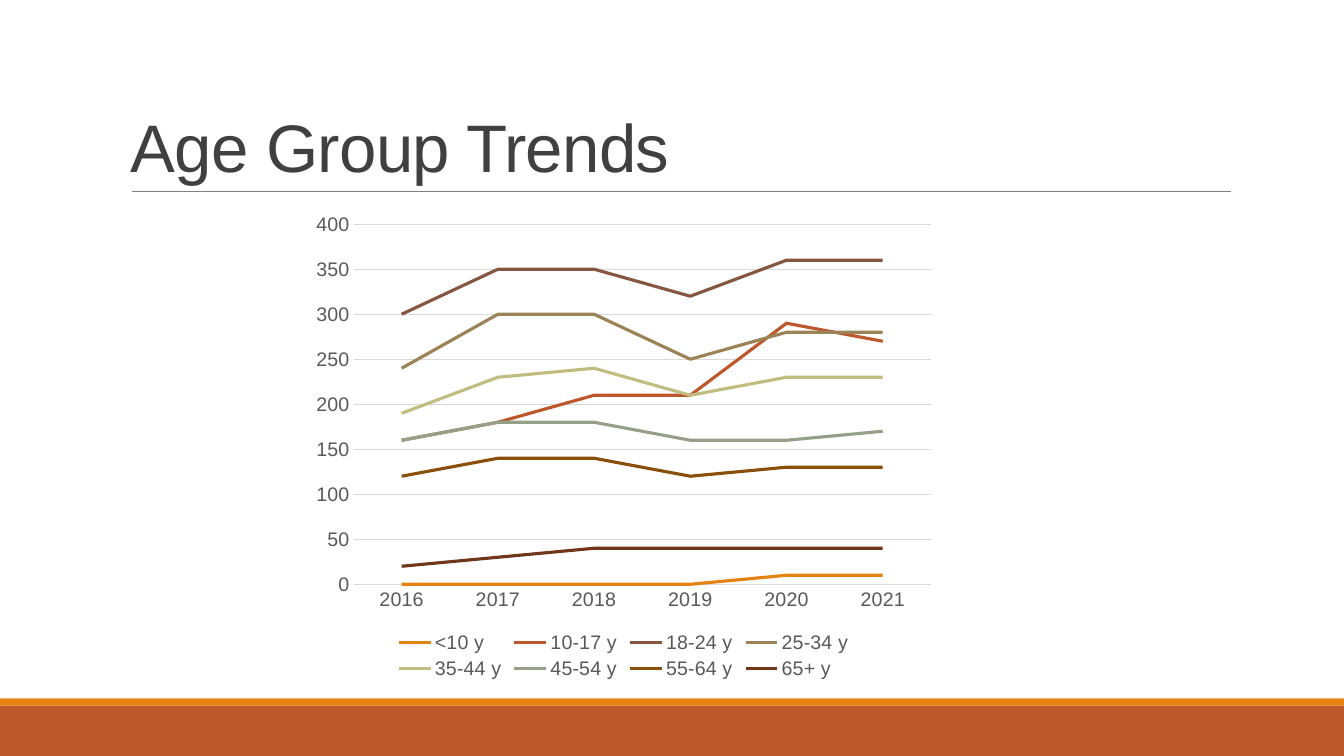
import dataclasses

import lxml.etree
import pptx
import pptx.chart.data
import pptx.dml.color
import pptx.enum.chart
import pptx.enum.shapes
import pptx.enum.text
import pptx.oxml.ns
import pptx.util
from pptx.util import Inches


@dataclasses.dataclass(frozen=True)
class Theme:
    """Colours, font and type sizes of the slide."""
    font: str = "Arial"
    title: str = "404040"
    label: str = "595959"
    grid: str = "D9D9D9"
    rule: str = "808080"
    band: str = "BD582C"
    stripe: str = "E48312"
    title_size: float = 48
    label_size: float = 14
    rule_width: float = 0.5
    grid_width: float = 0.75
    trend_width: float = 2.25


@dataclasses.dataclass(frozen=True)
class Box:
    """Place and size in inches."""
    left: float
    top: float
    width: float
    height: float

    def lengths(self) -> tuple:
        """Return the four measures as lengths."""
        return tuple(map(Inches, dataclasses.astuple(self)))


@dataclasses.dataclass(frozen=True)
class Band:
    """Coloured strip across the foot of the slide."""
    box: Box
    color: str


@dataclasses.dataclass(frozen=True)
class AgeGroup:
    """Yearly counts of one age group."""
    name: str
    color: str
    counts: tuple


THEME = Theme()
SLIDE_WIDTH, SLIDE_HEIGHT = 13.33, 7.5
YEARS = ("2016", "2017", "2018", "2019", "2020", "2021")
BANDS = (
    Band(Box(0, 7, SLIDE_WIDTH, 0.5), THEME.band),
    Band(Box(0, 6.93, SLIDE_WIDTH, 0.07), THEME.stripe),
)
AGE_GROUPS = (
    AgeGroup("<10 y", "E48312", (0, 0, 0, 0, 10, 10)),
    AgeGroup("10-17 y", "BD582C", (160, 180, 210, 210, 290, 270)),
    AgeGroup("18-24 y", "865640", (300, 350, 350, 320, 360, 360)),
    AgeGroup("25-34 y", "9B8357", (240, 300, 300, 250, 280, 280)),
    AgeGroup("35-44 y", "C2BC80", (190, 230, 240, 210, 230, 230)),
    AgeGroup("45-54 y", "94A088", (160, 180, 180, 160, 160, 170)),
    AgeGroup("55-64 y", "894F0B", (120, 140, 140, 120, 130, 130)),
    AgeGroup("65+ y", "71351A", (20, 30, 40, 40, 40, 40)),
)


def rgb(color: str) -> pptx.dml.color.RGBColor:
    """Turn a hex string into a colour."""
    return pptx.dml.color.RGBColor.from_string(color)


def style_font(font, size: float, color: str) -> None:
    """Set typeface, size and colour."""
    font.name = THEME.font
    font.size = pptx.util.Pt(size)
    font.color.rgb = rgb(color)


def style_line(line, color: str, width: float) -> None:
    """Set line colour and width."""
    line.color.rgb = rgb(color)
    line.width = pptx.util.Pt(width)


def draw_band(slide, band: Band) -> None:
    """Draw a filled strip without outline."""
    strip = slide.shapes.add_shape(
        pptx.enum.shapes.MSO_SHAPE.RECTANGLE, *band.box.lengths())
    strip.shadow.inherit = False
    strip.fill.solid()
    strip.fill.fore_color.rgb = rgb(band.color)
    strip.line.fill.background()


def draw_rule(slide, left: float, right: float, top: float) -> None:
    """Draw the thin line under the title."""
    rule = slide.shapes.add_connector(
        pptx.enum.shapes.MSO_CONNECTOR.STRAIGHT,
        Inches(left), Inches(top), Inches(right), Inches(top))
    style_line(rule.line, THEME.rule, THEME.rule_width)
    properties = rule.element.find(pptx.oxml.ns.qn("p:spPr"))
    lxml.etree.SubElement(properties, pptx.oxml.ns.qn("a:effectLst"))


def write_text(slide, text: str, box: Box, *, size: float, color: str,
               line_spacing: float = 1.0, tracking: float = 0) -> None:
    """Write bottom-anchored text with the given format."""
    frame = slide.shapes.add_textbox(*box.lengths()).text_frame
    frame.word_wrap = True
    frame.vertical_anchor = pptx.enum.text.MSO_ANCHOR.BOTTOM
    paragraph = frame.paragraphs[0]
    paragraph.line_spacing = line_spacing
    run = paragraph.add_run()
    run.text = text
    style_font(run.font, size, color)
    run.font._element.set("spc", str(round(tracking * 100)))


def draw_trends(slide, groups: tuple, box: Box) -> None:
    """Draw the line chart of all age groups."""
    counts = pptx.chart.data.CategoryChartData()
    counts.categories = YEARS
    for group in groups:
        counts.add_series(group.name, group.counts)
    trends = slide.shapes.add_chart(
        pptx.enum.chart.XL_CHART_TYPE.LINE, *box.lengths(), counts).chart
    style_font(trends.font, THEME.label_size, THEME.label)
    trends.has_title = False
    trends.has_legend = True
    trends.legend.position = pptx.enum.chart.XL_LEGEND_POSITION.BOTTOM
    trends.legend.include_in_layout = False
    style_font(trends.legend.font, THEME.label_size, THEME.label)

    years, values = trends.category_axis, trends.value_axis
    for axis in (years, values):
        axis.major_tick_mark = pptx.enum.chart.XL_TICK_MARK.NONE
        axis.minor_tick_mark = pptx.enum.chart.XL_TICK_MARK.NONE
        style_font(axis.tick_labels.font, THEME.label_size, THEME.label)
    style_line(years.format.line, THEME.grid, THEME.grid_width)
    values.format.line.fill.background()
    values.minimum_scale, values.maximum_scale = 0, 400
    values.major_unit = 50
    values.has_major_gridlines = True
    style_line(values.major_gridlines.format.line, THEME.grid, THEME.grid_width)

    trends.plots[0].vary_by_categories = False
    for trend, group in zip(trends.plots[0].series, groups):
        trend.smooth = False
        trend.marker.style = pptx.enum.chart.XL_MARKER_STYLE.NONE
        style_line(trend.format.line, group.color, THEME.trend_width)


def main() -> None:
    """Build and save the slide."""
    deck = pptx.Presentation()
    deck.slide_width = Inches(SLIDE_WIDTH)
    deck.slide_height = Inches(SLIDE_HEIGHT)
    slide = deck.slides.add_slide(deck.slide_layouts[6])
    for band in BANDS:
        draw_band(slide, band)
    draw_rule(slide, left=1.31, right=12.21, top=1.9)
    write_text(slide, "Age Group Trends", Box(1.2, 0.31, 11, 1.59),
               size=THEME.title_size, color=THEME.title,
               line_spacing=0.85, tracking=-0.5)
    draw_trends(slide, AGE_GROUPS, Box(3.01, 2.02, 6.35, 4.76))
    deck.save("out.pptx")


if __name__ == "__main__":
    main()
